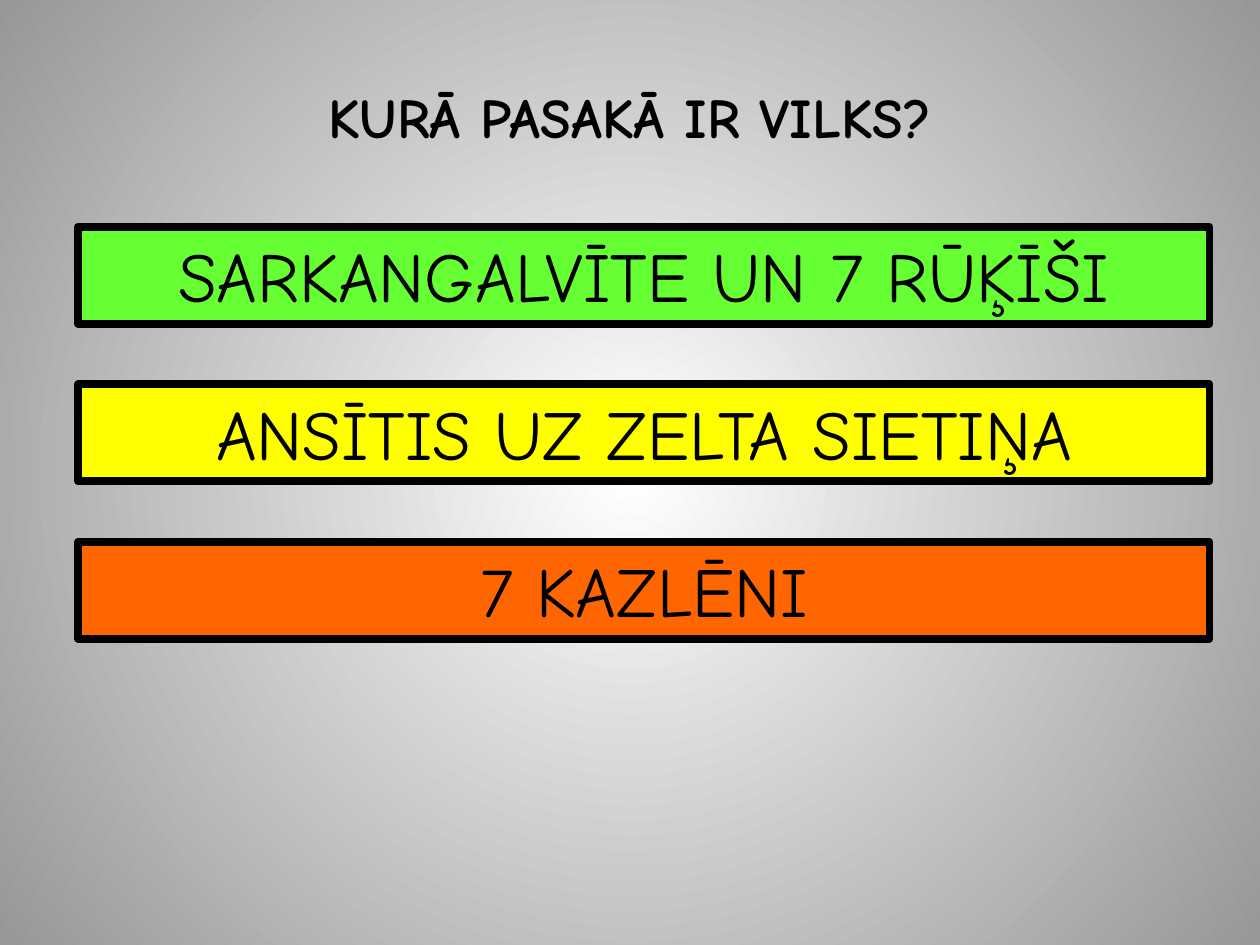
"""Build a quiz slide with one question and three answer bars."""
from lxml import etree
from pptx import Presentation
from pptx.dml.color import RGBColor
from pptx.enum.shapes import MSO_SHAPE
from pptx.enum.text import MSO_ANCHOR, MSO_AUTO_SIZE, PP_ALIGN
from pptx.oxml.ns import qn
from pptx.util import Inches, Pt

RECTANGLE = MSO_SHAPE.RECTANGLE
TOP, MIDDLE = MSO_ANCHOR.TOP, MSO_ANCHOR.MIDDLE
GROW = MSO_AUTO_SIZE.SHAPE_TO_FIT_TEXT
CENTER = PP_ALIGN.CENTER

COLORS = {
    "black": "000000",
    "white": "FFFFFF",
    "gray": "979797",
    "green": "66FF33",
    "yellow": "FFFF00",
    "orange": "FF6600",
}
ANSWERS = [
    ("SARKANGALVĪTE UN 7 RŪĶĪŠI", "green"),
    ("ANSĪTIS UZ ZELTA SIETIŅA", "yellow"),
    ("7 KAZLĒNI", "orange"),
]


class QuizSlide:
    font = "Comic Neue"

    def __init__(self, prs):
        self.s = prs.slides.add_slide(prs.slide_layouts[6])

    def color(self, name):
        return RGBColor.from_string(COLORS[name])

    def background(self, center, edge):
        fill = self.s.background.fill
        fill.gradient()
        for stop, name, position in zip(fill.gradient_stops, (center, edge), (0, 1)):
            stop.color.rgb = self.color(name)
            stop.position = position
        lin = next(self.s.element.iter(qn("a:lin")))
        radial = etree.Element(qn("a:path"), {"path": "circle"})
        etree.SubElement(radial, qn("a:fillToRect"), dict.fromkeys("ltrb", "50000"))
        lin.getparent().replace(lin, radial)

    def set_text(self, sp, text, size, anchor, bold=False):
        tf = sp.text_frame
        tf.word_wrap = True
        tf.vertical_anchor = anchor
        tf.text = text
        p = tf.paragraphs[0]
        p.alignment = CENTER
        font = p.runs[0].font
        font.name = self.font
        font.size = Pt(size)
        font.bold = bold
        font.color.rgb = self.color("black")

    def title(self, text, left, top, width, height):
        sp = self.s.shapes.add_textbox(*map(Inches, (left, top, width, height)))
        self.set_text(sp, text, 32, MIDDLE, bold=True)

    def bar(self, text, fill, left, top, width, height):
        sp = self.s.shapes.add_shape(RECTANGLE, *map(Inches, (left, top, width, height)))
        sp.shadow.inherit = False
        sp.fill.solid()
        sp.fill.fore_color.rgb = self.color(fill)
        sp.line.color.rgb = self.color("black")
        sp.line.width = Pt(4.5)
        self.set_text(sp, text, 40, TOP)
        sp.text_frame.auto_size = GROW


def main():
    prs = Presentation()
    prs.slide_width, prs.slide_height = Inches(10), Inches(7.5)
    quiz = QuizSlide(prs)
    quiz.background("white", "gray")
    quiz.title("KURĀ PASAKĀ IR VILKS?", 0.5, 0.3, 9, 1.25)
    for i, (answer, fill) in enumerate(ANSWERS):
        quiz.bar(answer, fill, 0.62, 1.8 + 1.25 * i, 8.98, 0.77)
    prs.save("out.pptx")


if __name__ == "__main__":
    main()
